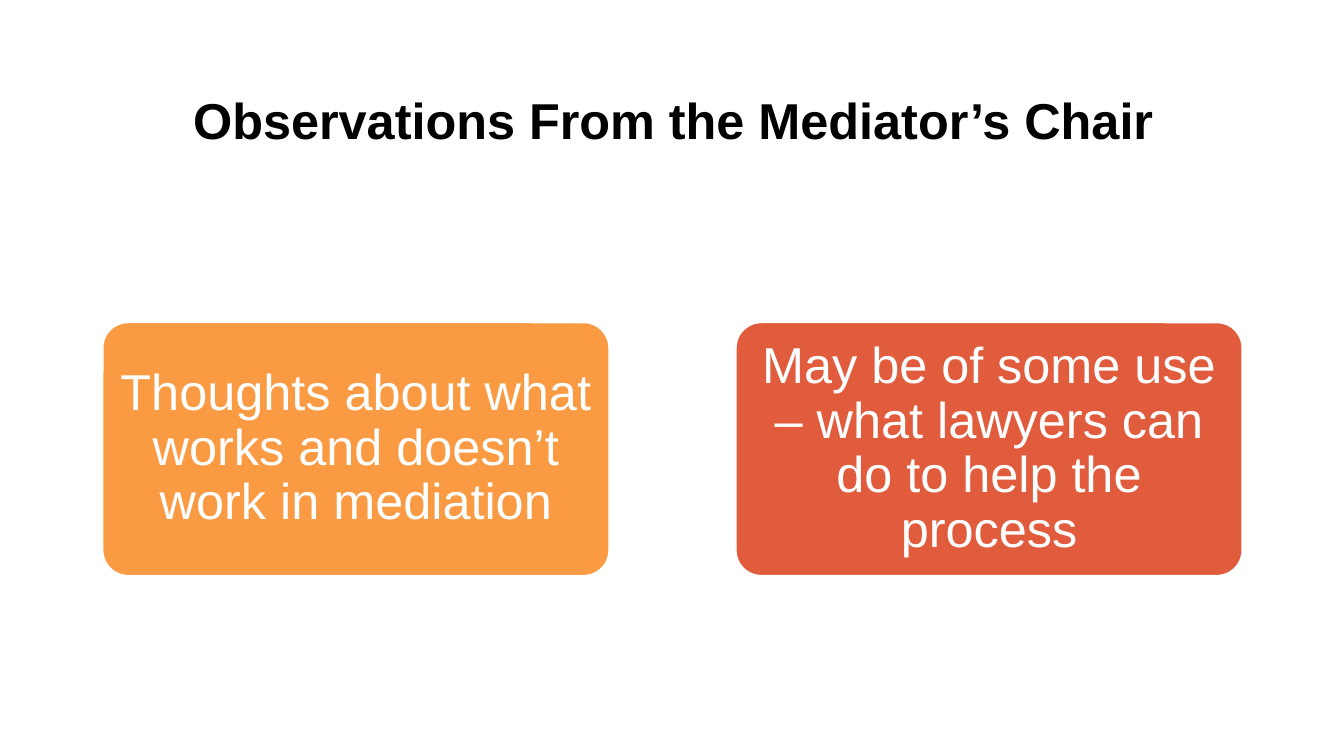
from dataclasses import dataclass

import pptx
import pptx.dml.color
import pptx.enum.shapes
import pptx.enum.text
import pptx.util

WIDTH = pptx.util.Inches(13.33)
HEIGHT = pptx.util.Inches(7.5)
FONT = "Arial"
TEXT_SIZE = 36
CARD_LEFT = 7.65
CARD_STEP = 47.11


@dataclass
class Area:
    left: float
    top: float
    width: float
    height: float

    def lengths(self) -> tuple[int, int, int, int]:
        return (
            int(WIDTH * self.left / 100),
            int(HEIGHT * self.top / 100),
            int(WIDTH * self.width / 100),
            int(HEIGHT * self.height / 100),
        )


@dataclass
class Card:
    text: str
    fill: str


TITLE_AREA = Area(12.53, 8, 75.17, 16.53)
CARDS = [
    Card("Thoughts about what works and doesn’t work in mediation", "FA9A42"),
    Card("May be of some use – what lawyers can do to help the process", "E15C3D"),
]


def color(value: str) -> pptx.dml.color.RGBColor:
    return pptx.dml.color.RGBColor.from_string(value)


def write_text(box, text: str, ink: str, bold: bool = False) -> None:
    frame = box.text_frame
    frame.word_wrap = True
    frame.vertical_anchor = pptx.enum.text.MSO_ANCHOR.MIDDLE
    para = frame.paragraphs[0]
    para.alignment = pptx.enum.text.PP_ALIGN.CENTER
    para.line_spacing = 0.9
    span = para.add_run()
    span.text = text
    span.font.name = FONT
    span.font.size = pptx.util.Pt(TEXT_SIZE)
    span.font.bold = bold
    span.font.color.rgb = color(ink)


def draw_card(page, card: Card, area: Area) -> None:
    box = page.shapes.add_shape(
        pptx.enum.shapes.MSO_SHAPE.ROUNDED_RECTANGLE, *area.lengths()
    )
    box.adjustments[0] = 0.1
    box.shadow.inherit = False
    box.fill.solid()
    box.fill.fore_color.rgb = color(card.fill)
    box.line.color.rgb = color("FFFFFF")
    box.line.width = pptx.util.Pt(1)
    frame = box.text_frame
    frame.margin_left = frame.margin_right = pptx.util.Inches(0.07)
    frame.margin_top = frame.margin_bottom = pptx.util.Inches(0.05)
    write_text(box, card.text, "FFFFFF")


def main() -> None:
    deck = pptx.Presentation()
    deck.slide_width = WIDTH
    deck.slide_height = HEIGHT
    page = deck.slides.add_slide(deck.slide_layouts[6])

    title = page.shapes.add_textbox(*TITLE_AREA.lengths())
    write_text(title, "Observations From the Mediator’s Chair", "000000", bold=True)

    for column, card in enumerate(CARDS):
        area = Area(CARD_LEFT + column * CARD_STEP, 42.67, 37.66, 33.47)
        draw_card(page, card, area)

    deck.save("out.pptx")


if __name__ == "__main__":
    main()
